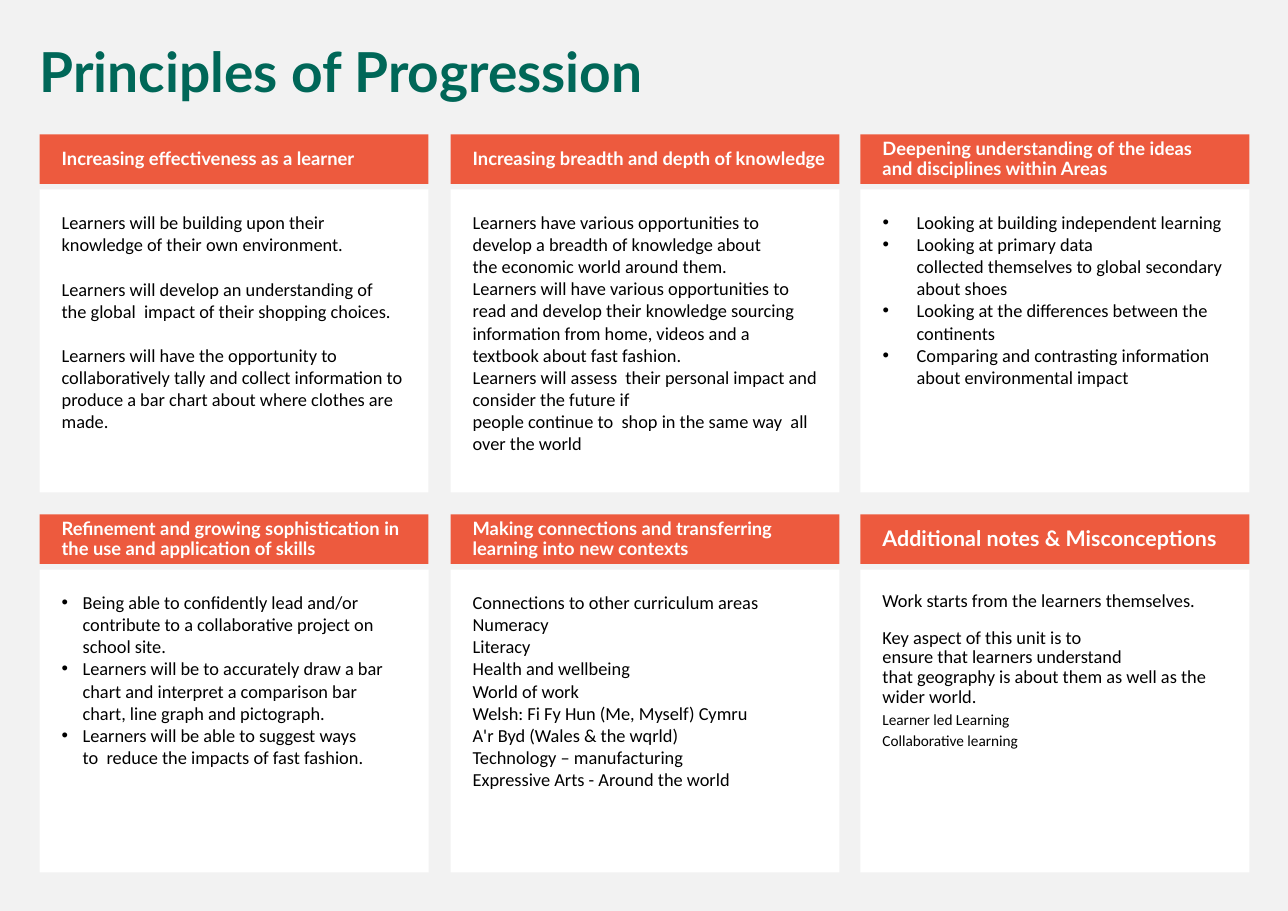
from pptx import Presentation
from pptx.dml.color import RGBColor
from pptx.enum.shapes import MSO_SHAPE
from pptx.enum.text import MSO_ANCHOR, MSO_AUTO_SIZE, PP_ALIGN
from pptx.oxml import parse_xml
from pptx.oxml.ns import nsdecls
from pptx.util import Inches, Pt


def paint(fill, tone):
    fill.solid()
    fill.fore_color.rgb = RGBColor.from_string(tone)


def write(frame, text, size=12, font="Calibri", tone="000000", bold=False,
          line=1.0, before=0, indent=0):
    """Add a paragraph; "~" in the text stands for a no-break space."""
    para = frame.paragraphs[0]
    if para.runs:
        para = frame.add_paragraph()
    para.alignment = PP_ALIGN.LEFT
    para.line_spacing = line
    para.space_before, para.space_after = Pt(before), Pt(0)
    run = para.add_run()
    run.text = text.replace("~", chr(160))
    run.font.size, run.font.name, run.font.bold = Pt(size), font, bold
    paint(run.font.fill, tone)
    if indent:
        props = para._p.get_or_add_pPr()
        props.set("marL", str(Inches(indent)))
        props.set("indent", str(-Inches(indent)))
        props.append(parse_xml(f'<a:buFont {nsdecls("a")} typeface="Arial"/>'))
        props.append(parse_xml(f'<a:buChar {nsdecls("a")} char="•"/>'))


deck = Presentation()
deck.slide_width, deck.slide_height = Inches(11.69), Inches(8.27)
slide = deck.slides.add_slide(deck.slide_layouts[3])
paint(slide.background.fill, "F2F2F2")

# Title
title = slide.shapes.title
title.left, title.top = Inches(0.26), Inches(0.36)
title.width, title.height = Inches(11.08), Inches(0.65)
title.text_frame.auto_size = MSO_AUTO_SIZE.NONE
title.text_frame.vertical_anchor = MSO_ANCHOR.TOP
write(title.text_frame, "Principles of Progression", size=36, font="Lato",
      tone="006758", bold=True, line=0.9)

# Panels: heading, heading size, groups of (format, paragraphs)
panels = [
    ("Increasing effectiveness as a learner", 12, [
        ({}, ["Learners will be building upon their knowledge of their own environment."]),
        ({"before": 14.5}, [
            "Learners will develop an understanding of the~global~ impact of their "
            "shopping choices.",
            "Learners will have the opportunity to collaboratively tally and collect "
            "information to produce a bar chart about where clothes are made."])]),
    ("Increasing breadth and depth of knowledge", 12, [
        ({}, [
            "Learners have various opportunities to develop a breadth of knowledge "
            "about the~economic world~around them.",
            "Learners will have various opportunities to read and develop their "
            "knowledge sourcing information from home, videos and~a textbook about "
            "fast fashion.",
            "Learners~will assess ~their~personal impact and consider the~future~if "
            "people~continue~to~~shop in the~same way~ all over the world"])]),
    ("Deepening understanding of the ideas and~disciplines within Areas", 12, [
        ({"indent": 0.31}, [
            "Looking at building independent learning",
            "Looking at primary data collected~themselves~to global secondary "
            "about~shoes",
            "Looking at the differences between the continents",
            "Comparing~and contrasting~information about environmental impact"])]),
    ("Refinement and growing sophistication in the use and~application of skills", 12, [
        ({"indent": 0.19}, [
            "Being able to confidently lead and/or contribute to a collaborative "
            "project on school site.",
            "Learners will be to accurately~draw a~bar chart~and interpret~a "
            "comparison~bar chart,~line~graph~and pictograph.",
            "Learners will be able to suggest ways to~~reduce the impacts of~fast "
            "fashion."])]),
    ("Making connections and transferring learning into~new contexts", 12, [
        ({}, [
            "Connections to other curriculum areas",
            "Numeracy",
            "Literacy",
            "Health and wellbeing",
            "World of work",
            "Welsh:~Fi~Fy~Hun~(Me, Myself)~Cymru A'r~Byd~(Wales & the wqrld)",
            "Technology – manufacturing",
            "Expressive~Arts -~Around the world"])]),
    ("Additional notes & Misconceptions", 14, [
        ({"line": 0.9, "before": 11}, [
            "Work starts from the learners themselves.",
            "Key aspect of this unit is to ensure~that~learners understand "
            "that~geography is about them as~well as the wider world."]),
        ({"size": 10, "line": 1.15}, ["Learner led Learning", "Collaborative learning"])]),
]

# Bulleted panels sit in the two body placeholders
slots = {2: slide.placeholders[1], 3: slide.placeholders[2]}
lefts = (0.36, 4.09, 7.81)
tops = (1.22, 4.67)
wide = Inches(3.53)

for i, (head, size, groups) in enumerate(panels):
    left, top = Inches(lefts[i % 3]), Inches(tops[i // 3])
    low, tall = top + Inches(0.5), Inches(2.75)
    bar = slide.shapes.add_shape(MSO_SHAPE.RECTANGLE, left, top, wide, Inches(0.45))
    if i in slots:
        card = slots[i]
        card.left, card.top, card.width, card.height = left, low, wide, tall
    else:
        card = slide.shapes.add_shape(MSO_SHAPE.RECTANGLE, left, low, wide, tall)
        card.shadow.inherit = False
    bar.shadow.inherit = False

    # Fill, margins and anchor
    for box, tone, pads, anchor in (
            (bar, "ED5A3E", (0.2, 0.05, 0.1, 0.05), MSO_ANCHOR.MIDDLE),
            (card, "FFFFFF", (0.2, 0.2, 0.2, 0.2), MSO_ANCHOR.TOP)):
        paint(box.fill, tone)
        box.line.fill.background()
        frame = box.text_frame
        frame.word_wrap = True
        frame.auto_size = MSO_AUTO_SIZE.NONE
        frame.vertical_anchor = anchor
        frame.margin_left, frame.margin_top = Inches(pads[0]), Inches(pads[1])
        frame.margin_right, frame.margin_bottom = Inches(pads[2]), Inches(pads[3])

    # Text
    write(bar.text_frame, head, size=size, font="Lato", tone="FFFFFF",
          bold=True, line=0.9)
    for form, lines in groups:
        for text in lines:
            write(card.text_frame, text, **form)

deck.save("out.pptx")
